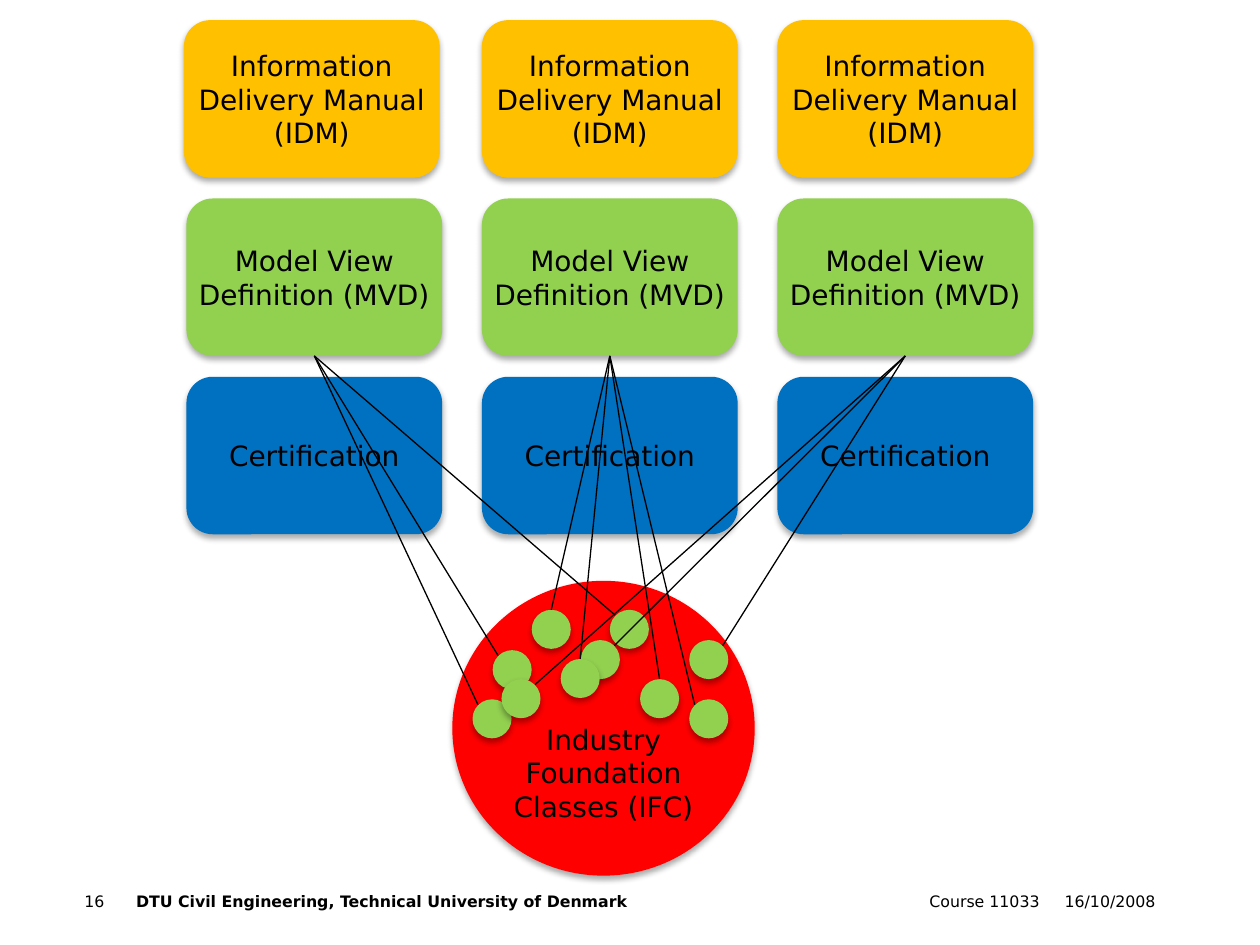
from dataclasses import dataclass
from lxml.etree import SubElement
from pptx import Presentation
from pptx.dml.color import RGBColor
from pptx.enum.shapes import MSO_CONNECTOR, MSO_SHAPE
from pptx.enum.text import MSO_ANCHOR, PP_ALIGN
from pptx.oxml.ns import qn
from pptx.util import Inches, Pt

FONT = "DejaVu Sans"
BLACK, AMBER, GREEN, BLUE, RED = "000000", "FFC000", "92D050", "0070C0", "FF0000"

# Grid of boxes, in inches
LEFT, TOP = 1.48, 0.16
COL_STEP, ROW_STEP = 2.345, 1.415
BOX_W, BOX_H = 2.03, 1.25
DOT = 0.31

# Where a line meets a dot, as shares of the dot's size
SITES = {"top": (0.5, 0), "left": (0.14, 0.14), "right": (0.86, 0.14)}


@dataclass
class Dot:
    x: float
    y: float
    site: str


@dataclass
class View:
    col: int
    dots: list[Dot]


@dataclass
class Footer:
    x: float
    w: float
    text: str
    align: PP_ALIGN = PP_ALIGN.LEFT
    bold: bool = False


# Views in drawing order, with the schema parts each one uses
VIEWS = [
    View(0, [Dot(4.84, 4.84, "left"), Dot(3.75, 5.55, "left"), Dot(3.91, 5.16, "left")]),
    View(2, [Dot(3.98, 5.39, "right"), Dot(4.61, 5.08, "right"), Dot(5.47, 5.08, "right")]),
    View(1, [Dot(5.08, 5.39, "top"), Dot(5.47, 5.55, "left"),
             Dot(4.45, 5.23, "top"), Dot(4.22, 4.84, "top")]),
]
FOOTERS = [
    Footer(0.67, 0.33, "16"),
    Footer(1.08, 4.04, "DTU Civil Engineering, Technical University of Denmark", bold=True),
    Footer(5.25, 3, "Course 11033", PP_ALIGN.RIGHT),
    Footer(8.33, 0.84, "16/10/2008", PP_ALIGN.RIGHT),
]


def rgb(value: str) -> RGBColor:
    return RGBColor.from_string(value)


def cell(col: int, row: int) -> tuple[float, float]:
    return LEFT + col * COL_STEP, TOP + row * ROW_STEP


def add_shadow(sp) -> None:
    sp.shadow.inherit = False
    effects = sp._element.spPr.find(qn("a:effectLst"))
    shadow = SubElement(effects, qn("a:outerShdw"), blurRad=str(Pt(3.5)),
                        dist=str(Pt(2.2)), dir="5400000", rotWithShape="0")
    color = SubElement(shadow, qn("a:srgbClr"), val=BLACK)
    SubElement(color, qn("a:alpha"), val="32000")


def write(sp, text: str, size: float, align: PP_ALIGN, bold: bool = False) -> None:
    tf = sp.text_frame
    tf.word_wrap = True
    tf.margin_left = tf.margin_right = tf.margin_top = tf.margin_bottom = 0
    p = tf.paragraphs[0]
    p.alignment = align
    r = p.add_run()
    r.text = text
    r.font.name, r.font.size, r.font.bold = FONT, Pt(size), bold
    r.font.color.rgb = rgb(BLACK)


def add_block(shapes, kind: MSO_SHAPE, x: float, y: float, w: float, h: float,
              fill: str, text: str = ""):
    sp = shapes.add_shape(kind, Inches(x), Inches(y), Inches(w), Inches(h))
    sp.fill.solid()
    sp.fill.fore_color.rgb = rgb(fill)
    sp.line.fill.background()
    add_shadow(sp)
    if text:
        write(sp, text, 16, PP_ALIGN.CENTER)
        sp.text_frame.vertical_anchor = MSO_ANCHOR.MIDDLE
    return sp


def add_box(shapes, x: float, y: float, fill: str, text: str) -> None:
    add_block(shapes, MSO_SHAPE.ROUNDED_RECTANGLE, x, y, BOX_W, BOX_H, fill, text)


def add_view(shapes, view: View) -> None:
    group = shapes.add_group_shape().shapes
    x, y = cell(view.col, 1)
    add_box(group, x, y, GREEN, "Model View Definition (MVD)")
    for dot in view.dots:
        add_block(group, MSO_SHAPE.OVAL, dot.x, dot.y, DOT, DOT, GREEN)
    for dot in view.dots:
        dx, dy = SITES[dot.site]
        line = group.add_connector(
            MSO_CONNECTOR.STRAIGHT, Inches(dot.x + dx * DOT), Inches(dot.y + dy * DOT),
            Inches(x + BOX_W / 2), Inches(y + BOX_H))
        line.line.color.rgb = rgb(BLACK)
        line.line.width = Pt(0.75)
        SubElement(line._element.spPr, qn("a:effectLst"))


def main() -> None:
    prs = Presentation()
    prs.slide_width, prs.slide_height = Inches(10), Inches(7.5)
    s = prs.slides.add_slide(prs.slide_layouts[6])

    # Footer line
    for f in FOOTERS:
        tb = s.shapes.add_textbox(Inches(f.x), Inches(7.08), Inches(f.w), Inches(0.33))
        write(tb, f.text, 9, f.align, f.bold)

    # Manuals on top, certification in the third row
    for col in range(3):
        x, y = cell(col, 0)
        nudge = -0.02 if col == 0 else 0
        add_box(s.shapes, x + nudge, y, AMBER, "Information Delivery Manual (IDM)")
        add_box(s.shapes, *cell(col, 2), BLUE, "Certification")

    # Common schema, with its text below the dots
    schema = add_block(s.shapes, MSO_SHAPE.OVAL, 3.59, 4.61, 2.4, 2.34, RED,
                       "Industry Foundation Classes (IFC)")
    schema.text_frame.vertical_anchor = MSO_ANCHOR.TOP
    schema.text_frame.margin_top = Inches(0.78)

    # Model views linked to their parts of the schema
    for view in VIEWS:
        add_view(s.shapes, view)

    prs.save("out.pptx")


if __name__ == "__main__":
    main()
